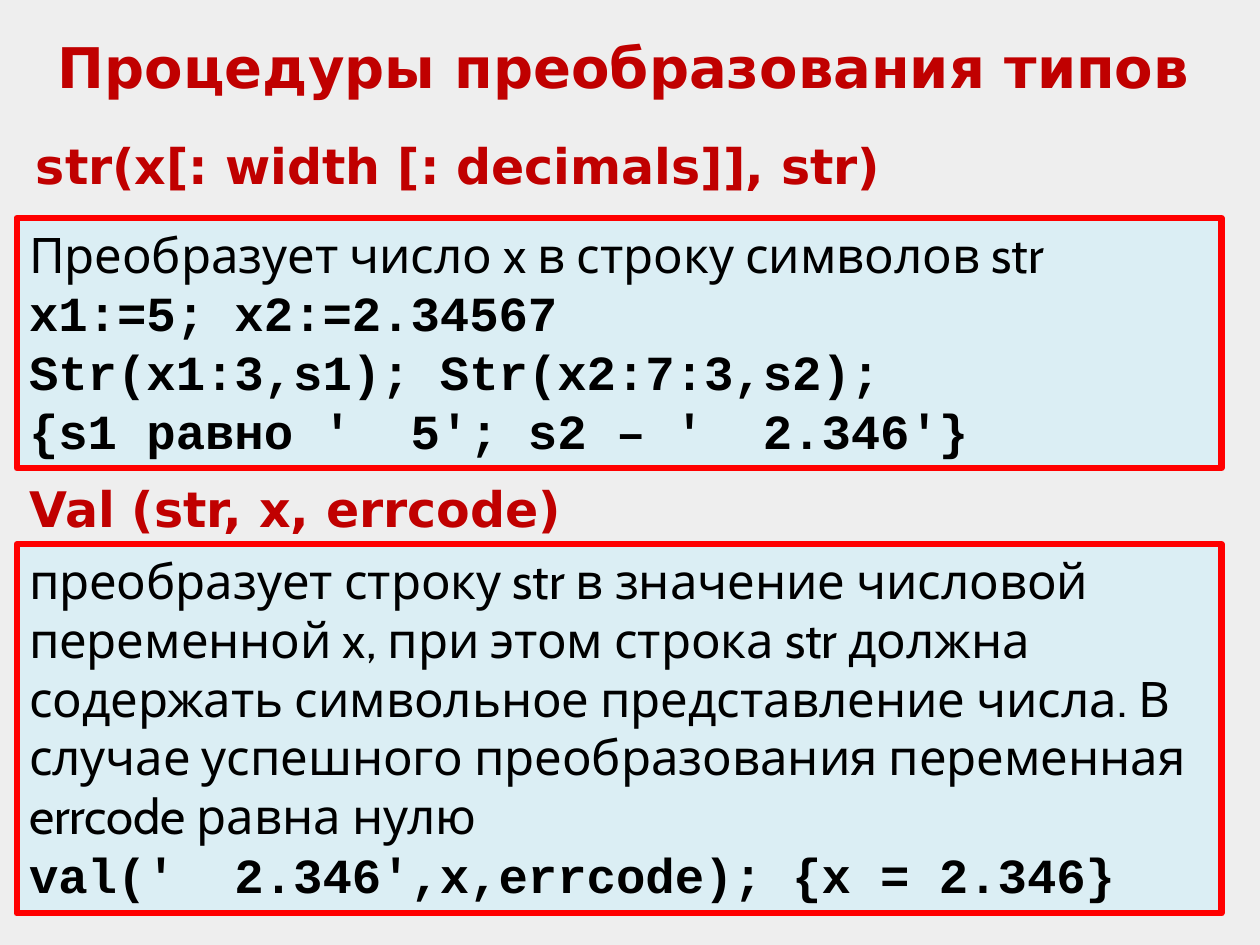
from pptx import Presentation
from pptx.dml.color import RGBColor
from pptx.enum.shapes import MSO_SHAPE
from pptx.enum.text import MSO_ANCHOR, PP_ALIGN
from pptx.util import Pt

HEADING_FONT, BODY_FONT, CODE_FONT = "DejaVu Sans", "Cabin", "Courier New"
DARK_RED, RED, PALE_BLUE, BLACK = "C00000", "FF0000", "DBEEF4", "000000"
BACKGROUND = "EEEEEE"


def color(value):
    return RGBColor.from_string(value)


def style(paragraph, font_name, size, hex_color, bold):
    paragraph.alignment = PP_ALIGN.LEFT
    font = paragraph.font
    font.name, font.size, font.bold = font_name, Pt(size), bold
    font.color.rgb = color(hex_color)


def add_heading(slide, box, text, size=28):
    """Bold red line of text in the given box."""
    frame = slide.shapes.add_textbox(*map(Pt, box)).text_frame
    frame.word_wrap = True
    paragraph = frame.paragraphs[0]
    paragraph.text = text
    style(paragraph, HEADING_FONT, size, DARK_RED, True)


def add_panel(slide, box, description, code_lines):
    """Red-framed panel: a description followed by lines of code."""
    shape = slide.shapes.add_shape(MSO_SHAPE.RECTANGLE, *map(Pt, box))
    shape.shadow.inherit = False
    shape.fill.solid()
    shape.fill.fore_color.rgb = color(PALE_BLUE)
    shape.line.color.rgb = color(RED)
    shape.line.width = Pt(3.5)

    frame = shape.text_frame
    frame.word_wrap = True
    frame.vertical_anchor = MSO_ANCHOR.TOP
    paragraph = frame.paragraphs[0]
    paragraph.text = description
    style(paragraph, BODY_FONT, 28, BLACK, False)
    for line in code_lines:
        paragraph = frame.add_paragraph()
        paragraph.text = line
        style(paragraph, CODE_FONT, 28, BLACK, True)


def main():
    presentation = Presentation()
    presentation.slide_width, presentation.slide_height = Pt(720), Pt(540)
    slide = presentation.slides.add_slide(presentation.slide_layouts[6])
    slide.background.fill.solid()
    slide.background.fill.fore_color.rgb = color(BACKGROUND)

    # Title
    add_heading(slide, (26, 15, 668, 46), "Процедуры преобразования типов", 32)

    # Number to string
    add_heading(slide, (13.5, 74, 668, 41), "str(x[: width [: decimals]], str)")
    add_panel(
        slide, (9.5, 124.5, 688.5, 143),
        "Преобразует число x в строку символов str",
        ["x1:=5; x2:=2.34567",
         "Str(x1:3,s1); Str(x2:7:3,s2);",
         "{s1 равно '  5'; s2 – '  2.346'}"],
    )

    # String to number
    add_heading(slide, (10, 270, 668, 41), "Val (str, x, errcode)")
    add_panel(
        slide, (9.5, 311, 688.5, 211),
        "преобразует строку str в значение числовой переменной x, при этом "
        "строка str должна содержать символьное представление числа. В случае "
        "успешного преобразования переменная errcode равна нулю",
        ["val('  2.346',x,errcode); {x = 2.346}"],
    )

    presentation.save("out.pptx")


if __name__ == "__main__":
    main()
